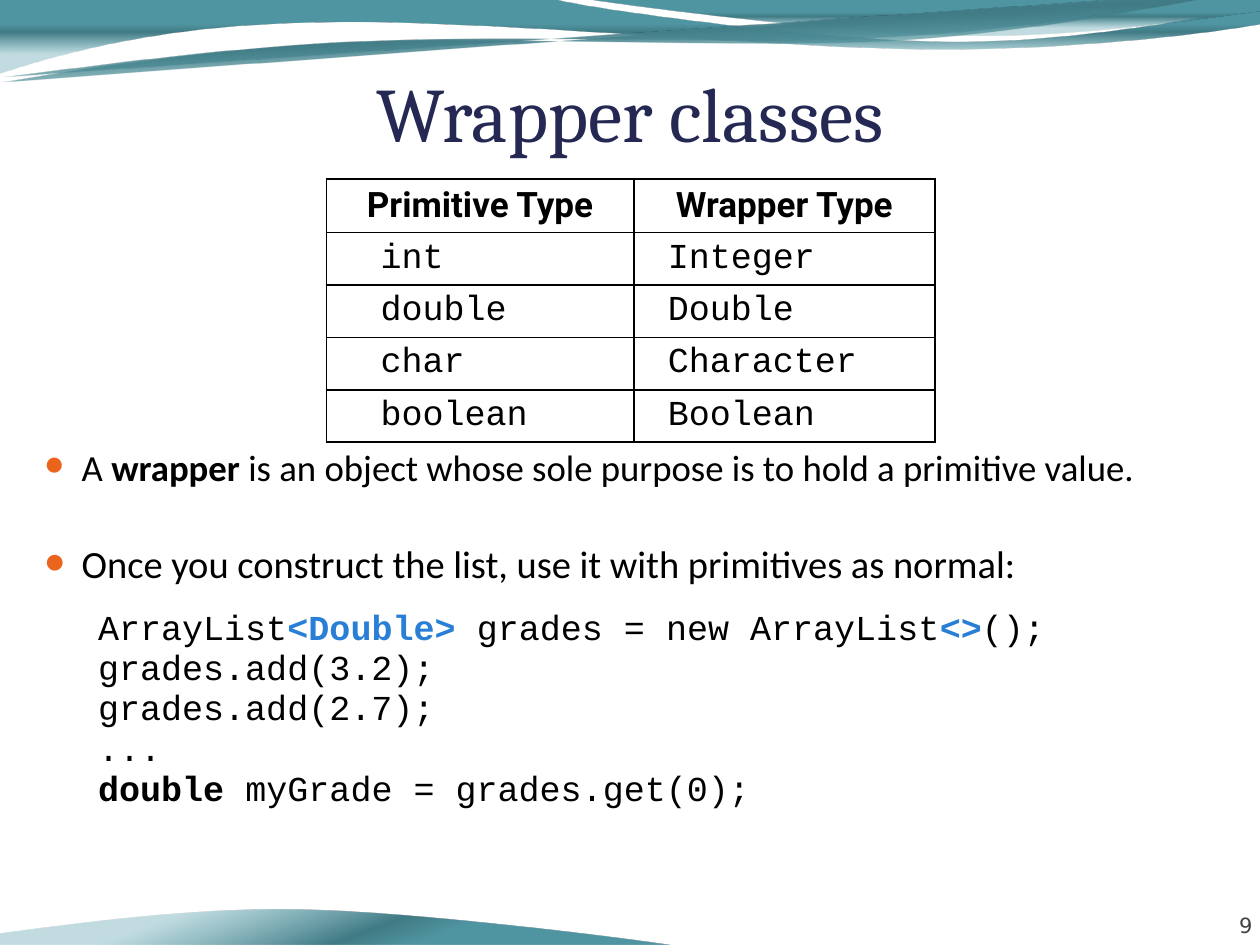
from math import cos, radians, sin

from lxml.etree import SubElement
from pptx import Presentation
from pptx.dml.color import RGBColor
from pptx.enum.text import MSO_ANCHOR as Anchor, MSO_AUTO_SIZE as AutoSize, PP_ALIGN as Align
from pptx.oxml.ns import qn
from pptx.util import Inches, Pt

BLACK = RGBColor(0x00, 0x00, 0x00)
NAVY = RGBColor(0x24, 0x28, 0x52)
BLUE = RGBColor(0x29, 0x7F, 0xD5)
ORANGE = RGBColor(0xEB, 0x64, 0x1B)
GRAY = RGBColor(0x42, 0x42, 0x42)
TEAL = RGBColor(0x50, 0x96, 0xA2)
DARK_TEAL = RGBColor(0x41, 0x7B, 0x85)
LIGHT_TEAL = RGBColor(0x5A, 0xA2, 0xAE)

# Position in percent, colour, opacity in percent
WAVE_STOPS = [(33, TEAL, 100), (44, DARK_TEAL, 100), (74, LIGHT_TEAL, 37)]

# Box, rotation, gradient angle, then a start point, lines (2 numbers) and curves (6 numbers)
WAVES = [
    ((-0.01, 0, 10.02, 0.58), 0, 270, [
        (0, 0), (4.4, 0), (4.76, 0.09, 6.64, 0.33, 7.58, 0.33),
        (8.53, 0.33, 9.58, 0.14, 10, 0.05), (10.01, 0.19),
        (9.83, 0.23, 8.7, 0.39, 7.46, 0.39), (6.22, 0.39, 3.82, 0.15, 2.57, 0.18),
        (1.29, 0.19, 0.46, 0.43, -0.01, 0.58), (0, 0)]),
    ((4.67, 0, 5.33, 0.3), 0, 270, [
        (4.67, 0), (4.98, 0.05, 6.74, 0.27, 7.63, 0.28),
        (8.52, 0.3, 9.61, 0.14, 10, 0.09), (10, 0), (4.67, 0)]),
    ((0, 0.16, 10.02, 0.28), 357.3, 270, [
        (0.01, 0.65), (0.5, 0.57, 1.6, 0.39, 2.79, 0.34),
        (3.98, 0.28, 5.93, 0.39, 7.14, 0.32), (8.34, 0.25, 9.41, 0, 10, -0.08)]),
    ((0, 0.16, 10.01, 0.25), 357.3, 270, [
        (0.01, 0.61), (0.49, 0.56, 1.66, 0.38, 2.85, 0.33),
        (4.04, 0.27, 5.97, 0.36, 7.16, 0.29), (8.36, 0.22, 9.41, -0.01, 10, -0.08)]),
    ((-0.01, 7.2, 5.33, 0.3), 180, 290, [
        (5.32, 7.5), (5.01, 7.45, 3.25, 7.23, 2.36, 7.22),
        (1.47, 7.2, 0.38, 7.36, -0.01, 7.41), (-0.01, 7.5), (5.32, 7.5)]),
]

TYPES = [("Primitive Type", "Wrapper Type"), ("int", "Integer"), ("double", "Double"),
         ("char", "Character"), ("boolean", "Boolean")]

# Runs are (text, format) pairs
BULLETS = [
    (21, [("A ", {}), ("wrapper", {"bold": True}),
          (" is an object whose sole purpose is to hold a primitive value.", {})]),
    (22, [("Once you construct the list, use it with primitives as normal:", {})]),
]
HIGHLIGHT = {"bold": True, "color": BLUE}
CODE = [
    [("ArrayList", {}), ("<Double>", HIGHLIGHT), (" grades = new ArrayList", {}),
     ("<>", HIGHLIGHT), ("();", {})],
    [("grades.add(3.2);", {})],
    [("grades.add(2.7);", {})],
    [("...", {})],
    [("double ", {"bold": True}), ("myGrade = grades.get(0);", {})],
]


def add_run(paragraph, text, size=20, font="Calibri", color=BLACK, bold=False):
    run = paragraph.add_run()
    run.text = text
    run.font.size = Pt(size)
    run.font.name = font
    run.font.color.rgb = color
    run.font.bold = bold


def add_wave(slide, box, rotation, angle, segments):
    left, top, width, height = box
    # Start from the box, then draw the curves inside it
    builder = slide.shapes.build_freeform(Inches(left), Inches(top))
    builder.add_line_segments([(Inches(left + x), Inches(top + y)) for x, y in
                               ((width, 0), (width, height), (0, height))])
    shape = builder.convert_to_shape()
    shape.rotation = rotation
    outline = next(shape._element.iter(qn("a:path")))
    for child in list(outline):
        outline.remove(child)
    turn = radians(-rotation)
    for index, numbers in enumerate(segments):
        kind = "cubicBezTo" if len(numbers) == 6 else "lnTo" if index else "moveTo"
        segment = SubElement(outline, qn("a:" + kind))
        for x, y in zip(numbers[::2], numbers[1::2]):
            dx, dy = x - left - width / 2, y - top - height / 2
            local_x = width / 2 + dx * cos(turn) - dy * sin(turn)
            local_y = height / 2 + dx * sin(turn) + dy * cos(turn)
            SubElement(segment, qn("a:pt"), x=str(Inches(local_x)), y=str(Inches(local_y)))
    # Teal gradient that fades out
    shape.shadow.inherit = False
    shape.line.fill.background()
    shape.fill.gradient()
    shape.fill.gradient_angle = angle
    stops = next(shape._element.iter(qn("a:gsLst")))
    for stop in list(stops):
        stops.remove(stop)
    for position, color, opacity in WAVE_STOPS:
        stop = SubElement(stops, qn("a:gs"), pos=str(position * 1000))
        rgb = SubElement(stop, qn("a:srgbClr"), val=str(color))
        if opacity < 100:
            SubElement(rgb, qn("a:alpha"), val=str(opacity * 1000))


def set_frame(frame, anchor, margins):
    frame.word_wrap = True
    frame.auto_size = AutoSize.NONE
    frame.vertical_anchor = anchor
    (frame.margin_left, frame.margin_top,
     frame.margin_right, frame.margin_bottom) = [Inches(m) for m in margins]


def place_title(slide, left, top, width, height):
    title = slide.shapes.title
    title.left, title.top, title.width, title.height = left, top, width, height
    set_frame(title.text_frame, Anchor.BOTTOM, (0, 0.05, 0, 0))
    paragraph = title.text_frame.paragraphs[0]
    paragraph.alignment = Align.CENTER
    add_run(paragraph, "Wrapper classes", size=44, font="Cambria", color=NAVY)


def add_slide_number(slide, left, top, width, height):
    frame = slide.shapes.add_textbox(left, top, width, height).text_frame
    set_frame(frame, Anchor.BOTTOM, (0, 0, 0, 0))
    frame.paragraphs[0].alignment = Align.RIGHT
    add_run(frame.paragraphs[0], "9", size=12, font="DejaVu Sans", color=GRAY)


def add_borders(cell):
    properties = cell._tc.get_or_add_tcPr()
    for side in ("lnL", "lnR", "lnT", "lnB"):
        line = SubElement(properties, qn("a:" + side), w=str(Pt(1)))
        fill = SubElement(line, qn("a:solidFill"))
        SubElement(fill, qn("a:srgbClr"), val=str(BLACK))


def add_type_table(slide, left, top, width, height):
    table = slide.shapes.add_table(len(TYPES), 2, left, top, width, height).table
    table.first_row = table.horz_banding = False
    table.columns[0].width = Inches(2.44)
    table.columns[1].width = width - Inches(2.44)
    for row, names in enumerate(TYPES):
        for column, name in enumerate(names):
            cell = table.cell(row, column)
            add_borders(cell)
            cell.fill.background()
            paragraph = cell.text_frame.paragraphs[0]
            if row == 0:
                paragraph.alignment = Align.CENTER
                add_run(paragraph, name, font="Roboto", bold=True)
            else:
                cell.margin_left = Inches((0.43, 0.27)[column])
                add_run(paragraph, name, font="Courier New")


def add_bullet(paragraph):
    properties = paragraph._p.get_or_add_pPr()
    properties.set("marL", str(Inches(0.3)))
    properties.set("indent", str(-Inches(0.3)))
    SubElement(SubElement(properties, qn("a:buClr")), qn("a:srgbClr"), val=str(ORANGE))
    SubElement(properties, qn("a:buSzPct"), val="95000")
    SubElement(properties, qn("a:buFont"), typeface="Courier New")
    SubElement(properties, qn("a:buChar"), char="●")


def add_body(slide, left, top, width, height):
    frame = slide.shapes.add_textbox(left, top, width, height).text_frame
    # The top margin clears the table
    set_frame(frame, Anchor.TOP, (0.1, 2.03, 0.1, 0.05))
    # Bullets
    for index, (size, runs) in enumerate(BULLETS):
        paragraph = frame.add_paragraph() if index else frame.paragraphs[0]
        if index:
            paragraph.space_before = Pt(29.5)
        add_bullet(paragraph)
        for text, style in runs:
            add_run(paragraph, text, size=size, **style)
    # Code lines
    for index, runs in enumerate(CODE):
        paragraph = frame.add_paragraph()
        paragraph.line_spacing = 0.8
        paragraph.space_before = Pt(3.85 if index else 15.2)
        paragraph._p.get_or_add_pPr().set("marL", str(Inches(0.43)))
        for text, style in runs:
            add_run(paragraph, text, font="Courier New", **style)


def main():
    presentation = Presentation()
    presentation.slide_width, presentation.slide_height = Inches(10), Inches(7.5)
    slide = presentation.slides.add_slide(presentation.slide_layouts[5])
    add_slide_number(slide, Inches(9.11), Inches(7.04), Inches(0.83), Inches(0.4))
    for wave in WAVES:
        add_wave(slide, *wave)
    place_title(slide, Inches(0.5), Inches(0.48), Inches(9), Inches(0.77))
    add_body(slide, Inches(0.25), Inches(1.5), Inches(9.75), Inches(5.67))
    add_type_table(slide, Inches(2.59), Inches(1.42), Inches(4.83), Inches(2.05))
    presentation.save("out.pptx")


if __name__ == "__main__":
    main()
